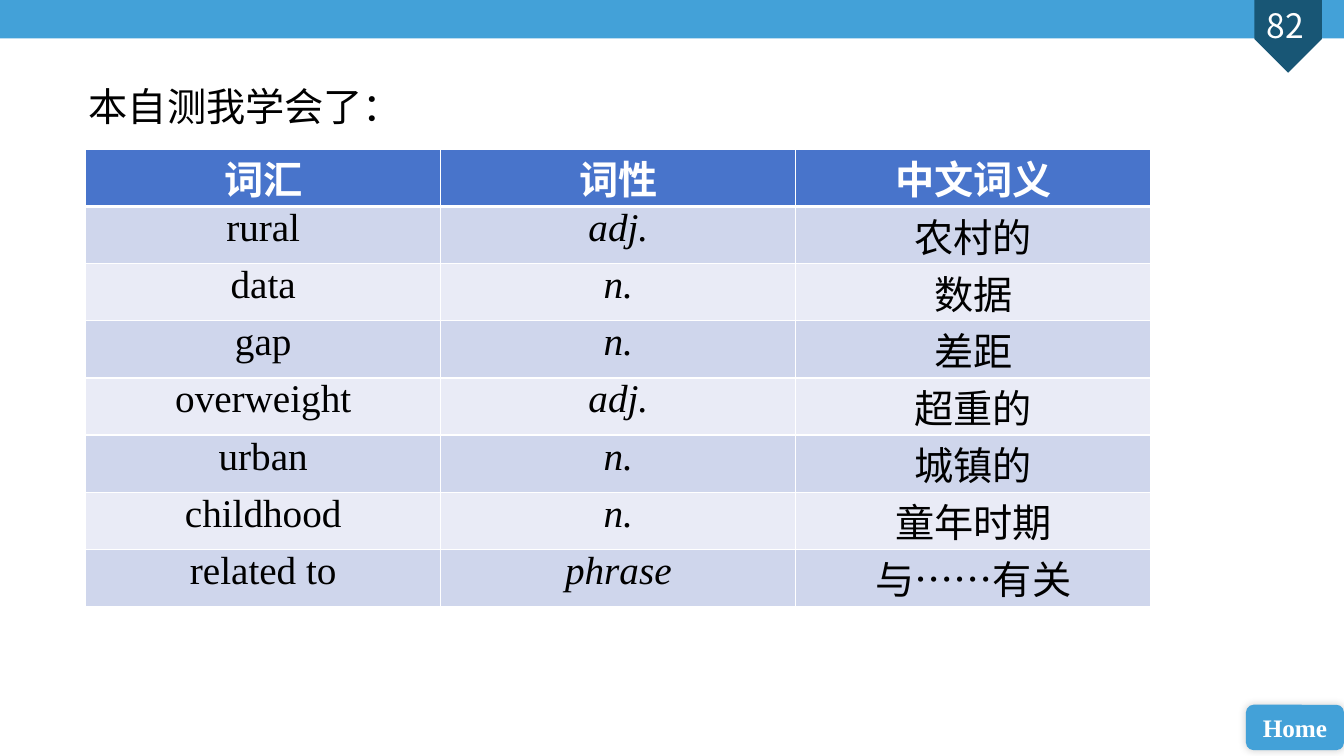
from dataclasses import dataclass

from lxml.etree import SubElement
from pptx import Presentation
from pptx.dml.color import RGBColor
from pptx.enum.shapes import MSO_SHAPE
from pptx.enum.text import MSO_ANCHOR, MSO_AUTO_SIZE, PP_ALIGN
from pptx.oxml.ns import qn
from pptx.util import Pt


@dataclass(frozen=True)
class Theme:
    bar: str = "43A1D8"
    badge: str = "185675"
    header: str = "4874CB"
    bands: tuple = ("CFD6EC", "E9EBF6")
    light: str = "FFFFFF"
    dark: str = "000000"
    serif: str = "Times New Roman"
    sans: str = "Calibri"
    number_font: str = "Noto Sans CJK SC"
    body_size: int = 28
    number_size: int = 24
    button_size: int = 18


@dataclass(frozen=True)
class Box:
    left: float
    top: float
    width: float
    height: float

    def lengths(self):
        return Pt(self.left), Pt(self.top), Pt(self.width), Pt(self.height)


THEME = Theme()
PAGE = Box(0, 0, 960, 540)
WORDS = [
    ("词汇", "词性", "中文词义"),
    ("rural", "adj.", "农村的"),
    ("data", "n.", "数据"),
    ("gap", "n.", "差距"),
    ("overweight", "adj.", "超重的"),
    ("urban", "n.", "城镇的"),
    ("childhood", "n.", "童年时期"),
    ("related to", "phrase", "与……有关"),
]


def write(frame, text, font_name, size, color, align=PP_ALIGN.CENTER, bold=False, italic=False):
    frame.text = text
    para = frame.paragraphs[0]
    para.alignment = align
    font = para.font
    font.name, font.size, font.bold, font.italic = font_name, Pt(size), bold, italic
    font.color.rgb = RGBColor.from_string(color)


def clear_margins(target):
    target.margin_left = target.margin_right = target.margin_top = target.margin_bottom = 0


def add_filled(page, kind, box, color):
    shape = page.shapes.add_shape(kind, *box.lengths())
    shape.shadow.inherit = False
    shape.fill.solid()
    shape.fill.fore_color.rgb = RGBColor.from_string(color)
    shape.line.fill.background()
    return shape


def add_top_bar(page, box):
    add_filled(page, MSO_SHAPE.RECTANGLE, box, THEME.bar)


def add_page_badge(page, box, number):
    """Draw a pentagon pointing down, filling the box, with the number in its upper part."""
    sideways = Box(box.left + (box.width - box.height) / 2,
                   box.top + (box.height - box.width) / 2, box.height, box.width)
    add_filled(page, MSO_SHAPE.PENTAGON, sideways, THEME.badge).rotation = 90
    label = Box(box.left - 2, box.top, box.width, 36)
    frame = page.shapes.add_textbox(*label.lengths()).text_frame
    frame.word_wrap = True
    clear_margins(frame)
    frame.vertical_anchor = MSO_ANCHOR.MIDDLE
    write(frame, number, THEME.number_font, THEME.number_size, THEME.light)


def add_home_button(page, box):
    button = add_filled(page, MSO_SHAPE.ROUNDED_RECTANGLE, box, THEME.bar)
    effects = button._element.spPr.find(qn("a:effectLst"))
    shadow = SubElement(effects, qn("a:outerShdw"), blurRad=str(Pt(6)), dist="0", dir="18900000")
    color = SubElement(shadow, qn("a:srgbClr"), val=THEME.dark)
    SubElement(color, qn("a:alpha"), val="20000")
    frame = button.text_frame
    frame.word_wrap = False
    frame.vertical_anchor = MSO_ANCHOR.MIDDLE
    write(frame, "Home", THEME.serif, THEME.button_size, THEME.light, bold=True)


def set_heading(page, box, text):
    title = page.shapes.title
    title.left, title.top, title.width, title.height = box.lengths()
    frame = title.text_frame
    frame.word_wrap = True
    frame.auto_size = MSO_AUTO_SIZE.NONE
    frame.vertical_anchor = MSO_ANCHOR.MIDDLE
    write(frame, text, THEME.sans, THEME.body_size, THEME.dark, PP_ALIGN.LEFT)


def set_borders(cell, widths):
    """Give the cell light borders; widths maps a side's tag to points."""
    properties = cell._tc.get_or_add_tcPr()
    for position, (side, width) in enumerate(widths.items()):
        line = properties.makeelement(qn(f"a:{side}"), {"w": str(Pt(width))})
        fill = SubElement(line, qn("a:solidFill"))
        SubElement(fill, qn("a:srgbClr"), val=THEME.light)
        properties.insert(position, line)


def add_word_table(page, box, words):
    table = page.shapes.add_table(len(words), len(words[0]), *box.lengths()).table
    for column in table.columns:
        column.width = Pt(box.width / len(words[0]))
    for row_index, (row, texts) in enumerate(zip(table.rows, words)):
        row.height = Pt(box.height / len(words))
        is_header = row_index == 0
        fill = THEME.header if is_header else THEME.bands[(row_index - 1) % 2]
        for column_index, (cell, text) in enumerate(zip(row.cells, texts)):
            clear_margins(cell)
            write(cell.text_frame, text, THEME.serif, THEME.body_size,
                  THEME.light if is_header else THEME.dark,
                  bold=is_header, italic=column_index == 1 and not is_header)
            cell.fill.solid()
            cell.fill.fore_color.rgb = RGBColor.from_string(fill)
            set_borders(cell, {"lnL": 1, "lnR": 1, "lnT": 3 if row_index == 1 else 1,
                               "lnB": 3 if is_header else 1})


def build_vocabulary_slide(deck, box):
    page = deck.slides.add_slide(deck.slide_layouts[5])
    right, bottom = box.left + box.width, box.top + box.height
    add_top_bar(page, Box(box.left, box.top, box.width, 27.4))
    add_page_badge(page, Box(right - 64, box.top, 48.2, 52), "82")
    add_home_button(page, Box(right - 70, bottom - 36.6, 70, 32.4))
    add_word_table(page, Box(box.left + 61.2, box.top + 106.8, 761, 326.4), WORDS)
    set_heading(page, Box(box.left + 56.2, box.top + 55.4, 278.6, 41), "本自测我学会了：")


def main():
    deck = Presentation()
    deck.slide_width, deck.slide_height = Pt(PAGE.width), Pt(PAGE.height)
    build_vocabulary_slide(deck, PAGE)
    deck.save("out.pptx")


if __name__ == "__main__":
    main()
